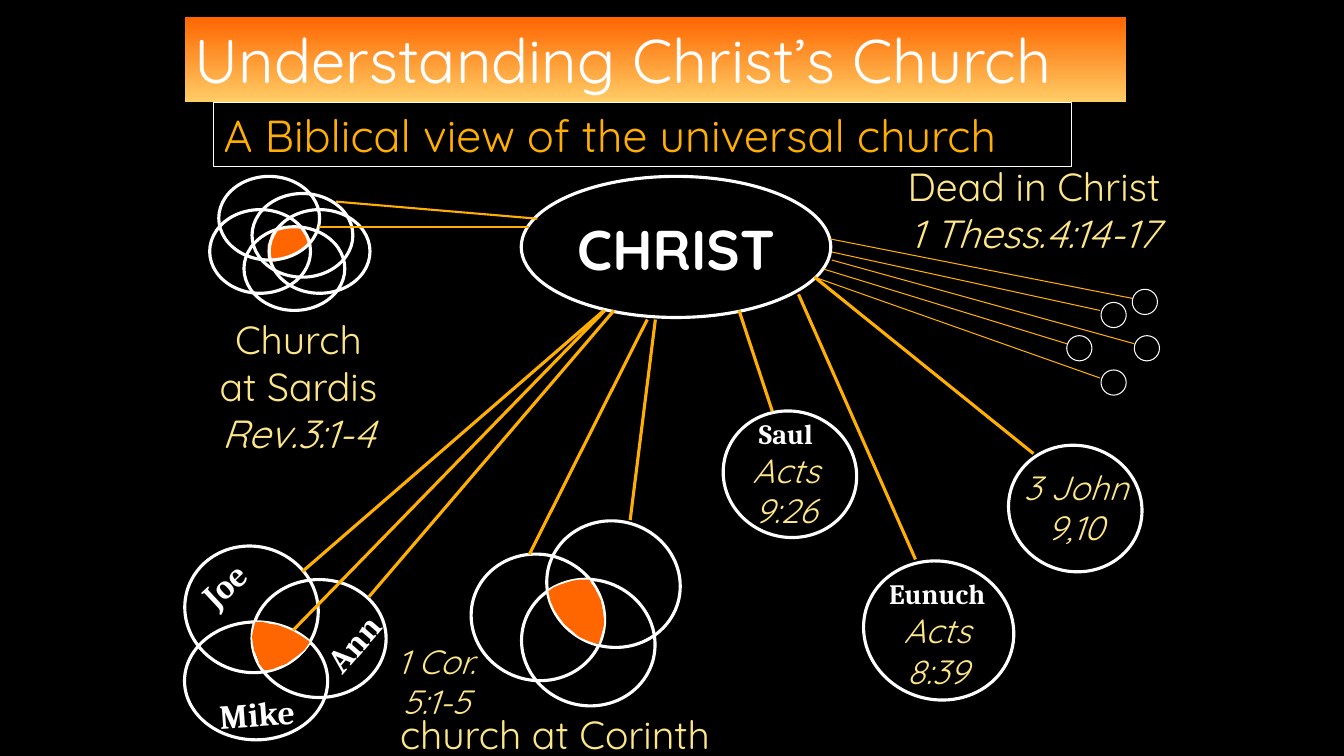
from dataclasses import dataclass

from lxml import etree
from pptx import Presentation
from pptx.dml.color import RGBColor
from pptx.enum.shapes import MSO_CONNECTOR, MSO_SHAPE
from pptx.enum.text import MSO_ANCHOR, MSO_AUTO_SIZE, PP_ALIGN
from pptx.oxml.ns import qn
from pptx.util import Pt

PX = 9144  # 100 px to the inch
COLORS = {"black": "000000", "white": "FFFFFF", "gold": "FFAF03",
          "cream": "FDE689", "orange": "FF6600", "peach": "FFCC66"}
TILT = 16


@dataclass
class TextStyle:
    font: str
    size: int
    color: str
    bold: bool = False
    italic: bool = False


TITLE = TextStyle("Quicksand", 44, "white")
SUBTITLE = TextStyle("Quicksand", 32, "gold")
CHRIST = TextStyle("Quicksand", 40, "white", bold=True)
CAPTION = TextStyle("Quicksand", 28, "cream")
CAPTION_VERSE = TextStyle("Quicksand", 28, "cream", italic=True)
VERSE = TextStyle("Quicksand", 24, "cream", italic=True)
NAME = TextStyle("Cambria", 24, "white", bold=True)
SMALL_NAME = TextStyle("Cambria", 20, "white", bold=True)


def color(name):
    return RGBColor.from_string(COLORS[name])


def set_line(shape, name, weight):
    shape.line.color.rgb = color(name)
    shape.line.width = Pt(weight)


def write(frame, lines, align=PP_ALIGN.CENTER):
    """Fill a text frame with one (text, style) pair per paragraph."""
    frame.word_wrap = True
    frame.auto_size = MSO_AUTO_SIZE.NONE
    frame.vertical_anchor = MSO_ANCHOR.TOP
    for index, (text, style) in enumerate(lines):
        paragraph = frame.add_paragraph() if index else frame.paragraphs[0]
        paragraph.text = text
        paragraph.alignment = align
        font = paragraph.font
        font.name, font.size = style.font, Pt(style.size)
        font.bold, font.italic = style.bold, style.italic
        font.color.rgb = color(style.color)


@dataclass
class Region:
    """A box on the slide; its parts are placed from its left top corner."""
    slide: object
    left: int
    top: int

    def box(self, x, y, width, height):
        return [n * PX for n in (self.left + x, self.top + y, width, height)]

    def circle(self, x, y, width, height, weight=2.25, rotation=0):
        shape = self.slide.shapes.add_shape(MSO_SHAPE.OVAL, *self.box(x, y, width, height))
        shape.shadow.inherit = False
        shape.fill.background()
        shape.rotation = rotation
        set_line(shape, "white", weight)

    def ray(self, rim, x, y, weight=2.25):
        """Join a slide point on Christ's rim to a point of this region."""
        line = self.slide.shapes.add_connector(
            MSO_CONNECTOR.STRAIGHT, rim[0] * PX, rim[1] * PX,
            (self.left + x) * PX, (self.top + y) * PX)
        set_line(line, "gold", weight)
        etree.SubElement(line._element.spPr, qn("a:effectLst"))

    def label(self, x, y, width, height, lines, rotation=0):
        text_box = self.slide.shapes.add_textbox(*self.box(x, y, width, height))
        text_box.rotation = rotation
        write(text_box.text_frame, lines)

    def overlap(self, points, weight=1.5):
        """Colour the area that the circles share."""
        builder = self.slide.shapes.build_freeform(*points[0], scale=PX)
        builder.add_line_segments(points[1:], close=True)
        shape = builder.convert_to_shape(self.left * PX, self.top * PX)
        shape.shadow.inherit = False
        shape.fill.solid()
        shape.fill.fore_color.rgb = color("orange")
        set_line(shape, "orange", weight)


def add_heading(region):
    title = region.slide.shapes.title
    title.left, title.top, title.width, title.height = region.box(0, 0, 934, 84)
    title.fill.gradient()
    title.fill.gradient_angle = 270
    for stop, name in zip(title.fill.gradient_stops, ("orange", "peach")):
        stop.color.rgb = color(name)
    for stop, position in zip(title.fill.gradient_stops, (0, 1)):
        stop.position = position
    write(title.text_frame, [("Understanding Christ’s Church", TITLE)], PP_ALIGN.LEFT)

    subtitle = region.slide.shapes.add_shape(MSO_SHAPE.RECTANGLE, *region.box(29, 85, 851, 63))
    subtitle.shadow.inherit = False
    subtitle.fill.background()
    set_line(subtitle, "white", 0.75)
    write(subtitle.text_frame, [("A Biblical view of the universal church", SUBTITLE)],
          PP_ALIGN.LEFT)


def add_christ(region):
    region.label(-9, 33, 325, 77, [("CHRIST", CHRIST)])
    region.circle(0, 0, 307, 140)


def add_sardis(region):
    region.overlap([
        (60, 83), (59, 79), (59, 68), (61, 64), (62, 59), (65, 55), (77, 52),
        (80, 51), (92, 52), (95, 57), (99, 64), (97, 67), (95, 69), (92, 70),
        (89, 73), (84, 76), (80, 77), (71, 80), (69, 81), (65, 83)], 2.25)
    for x, y in ((34, 50), (59, 33), (0, 33), (42, 17), (9, 0)):
        region.circle(x, y, 100, 83)
    region.ray((533, 217), 125, 25, 1.5)
    region.ray((525, 225), 108, 50, 1.5)
    region.label(-16, 133, 208, 151, [
        ("Church", CAPTION), ("at Sardis", CAPTION), ("Rev.3:1-4", CAPTION_VERSE)])


def add_household(region):
    region.circle(0, 0, 133, 125, rotation=TILT)
    region.circle(67, 33, 133, 117)
    region.circle(0, 75, 142, 117)
    for name, x, y, rotation in (("Joe", -49, 13, 317), ("Ann", 79, 71, 311),
                                 ("Mike", -16, 141, 356)):
        region.label(x, y, 176, 50, [(name, NAME)], rotation)
    region.ray((599, 308), 117, 25)
    region.ray((609, 308), 183, 50)
    region.ray((600, 308), 108, 83)
    region.overlap([
        (71, 76), (69, 84), (68, 90), (69, 97), (70, 103), (73, 109), (75, 116),
        (78, 120), (80, 122), (87, 121), (94, 118), (100, 116), (107, 111),
        (111, 108), (116, 104), (119, 101), (123, 95), (114, 89), (107, 85),
        (100, 82), (92, 79), (85, 78), (77, 76)])


def add_corinth(region):
    for x, y in ((50, 58), (0, 33), (75, 0)):
        region.circle(x, y, 133, 125, rotation=TILT)
    region.ray((642, 317), 58, 33)
    region.ray((650, 317), 158, -1)
    region.label(-100, 183, 367, 57, [("church at Corinth", CAPTION)])
    region.label(-105, 114, 142, 90, [("1 Cor.", VERSE), ("5:1-5", VERSE)])
    region.overlap([
        (78, 70), (80, 79), (84, 88), (88, 94), (94, 102), (101, 108), (108, 114),
        (117, 118), (126, 121), (129, 111), (131, 103), (131, 97), (130, 89),
        (128, 79), (125, 73), (122, 67), (119, 63), (117, 59), (109, 59),
        (102, 60), (95, 62), (89, 64), (82, 67)])


def add_believer(region, size, rim, ray_end, label_box, lines):
    """One person outside any local church, joined to Christ."""
    region.circle(0, 0, *size, rotation=TILT)
    region.ray(rim, *ray_end)
    region.label(*label_box, lines)


def add_dead_in_christ(region):
    region.label(-216, -131, 367, 104, [
        ("Dead in Christ", CAPTION), ("1 Thess.4:14-17", CAPTION_VERSE)])
    for rim, ray_end, corner in (
            ((823, 237), (65, 9), (65, 0)), ((808, 275), (33, 88), (34, 80)),
            ((817, 267), (0, 54), (0, 46)), ((825, 258), (67, 54), (67, 46)),
            ((825, 250), (33, 21), (34, 13))):
        region.ray(rim, *ray_end, weight=0.75)
        region.circle(*corner, 25, 25, weight=0.75)


def main():
    presentation = Presentation()
    presentation.slide_width, presentation.slide_height = 1333 * PX, 750 * PX
    slide = presentation.slides.add_slide(presentation.slide_layouts[5])
    slide.background.fill.solid()
    slide.background.fill.fore_color.rgb = color("black")

    add_heading(Region(slide, 183, 17))
    add_christ(Region(slide, 517, 175))
    add_household(Region(slide, 183, 542))
    add_corinth(Region(slide, 467, 517))
    add_believer(Region(slide, 717, 408), (133, 125), (733, 308), (49, 0), (-25, 0, 175, 165),
                 [("Saul", SMALL_NAME), ("Acts", VERSE), ("9:26", VERSE)])
    add_believer(Region(slide, 856, 557), (150, 137), (792, 292), (52, -2), (-14, 10, 175, 165),
                 [("Eunuch", SMALL_NAME), ("Acts", VERSE), ("8:39", VERSE)])
    add_believer(Region(slide, 1000, 442), (133, 125), (808, 275), (25, 8), (-25, 16, 184, 131),
                 [("3 John", VERSE), ("9,10", VERSE)])
    add_dead_in_christ(Region(slide, 1058, 287))
    add_sardis(Region(slide, 208, 175))
    presentation.save("out.pptx")


if __name__ == "__main__":
    main()
